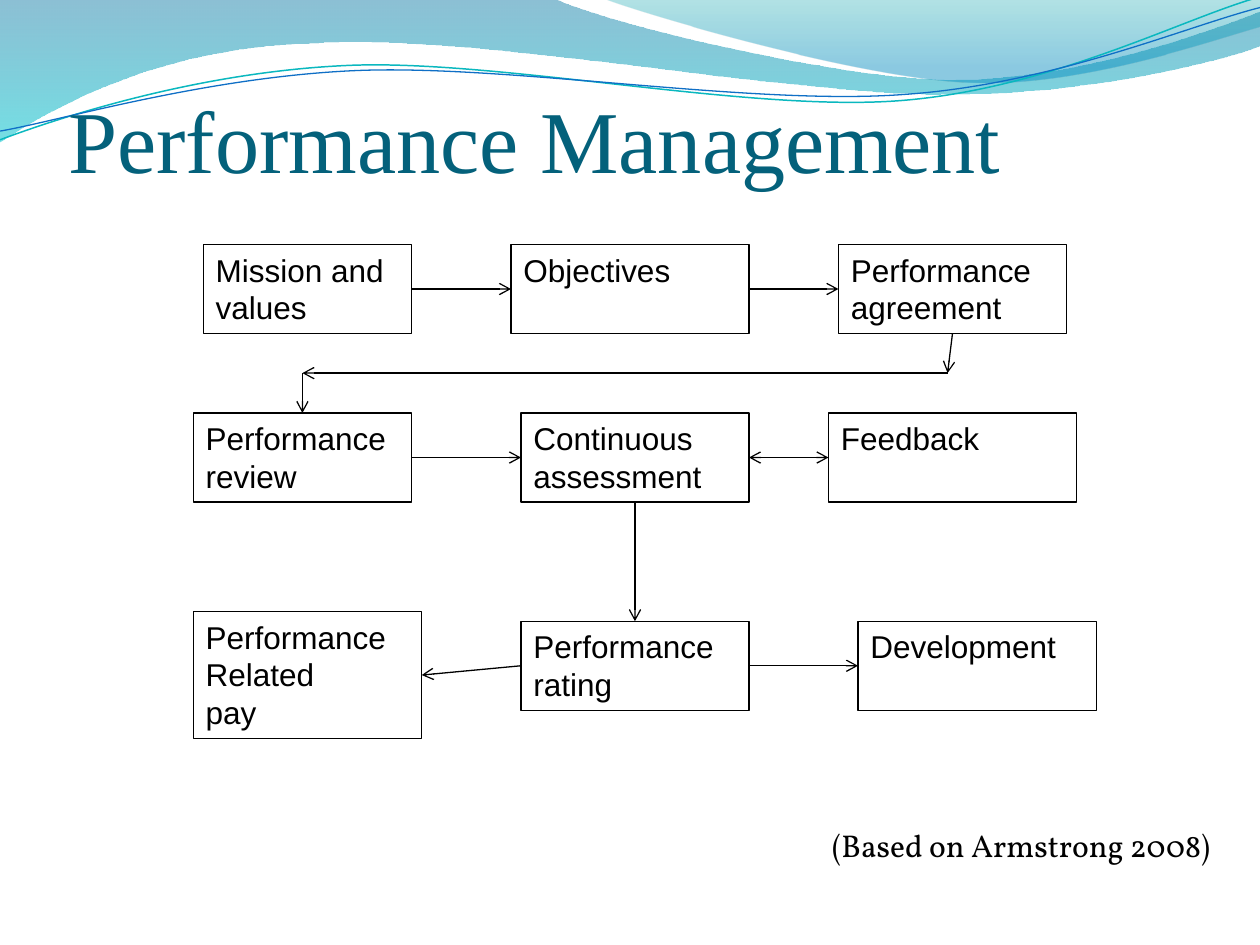
from lxml import etree
from pptx import Presentation
from pptx.dml.color import RGBColor
from pptx.enum.shapes import MSO_CONNECTOR, MSO_SHAPE
from pptx.enum.text import MSO_ANCHOR, PP_ALIGN
from pptx.oxml.ns import qn
from pptx.util import Pt

RECT, LINE = MSO_SHAPE.RECTANGLE, MSO_CONNECTOR.STRAIGHT
TOP, LEFT, BOTTOM, RIGHT = range(4)
rgb = RGBColor.from_string

prs = Presentation()
prs.slide_width, prs.slide_height = Pt(720), Pt(540)
s = prs.slides.add_slide(prs.slide_layouts[6])


def add_wave(start, steps, close):
    """Draw straight (x, y) and cubic (x1, y1, x2, y2, x, y) steps."""
    fb = s.shapes.build_freeform(Pt(start[0]), Pt(start[1]))
    fb.add_line_segments([(Pt(x), Pt(y)) for *_, x, y in steps], close=close)
    sp = fb.convert_to_shape()
    for seg, step in zip(list(sp.element.iter(qn("a:lnTo"))), steps):
        if len(step) == 6:
            seg.tag = qn("a:cubicBezTo")
            for i in (0, 2):
                pt = etree.Element(qn("a:pt"), x=str(Pt(step[i]) - sp.left),
                                   y=str(Pt(step[i + 1]) - sp.top))
                seg.insert(i // 2, pt)
    return sp


def write(tf, text, size, font, color):
    """Fill a text frame, one paragraph for each line of the text."""
    for i, line in enumerate(text.split("\n")):
        p = tf.paragraphs[0] if i == 0 else tf.add_paragraph()
        p.alignment = PP_ALIGN.LEFT
        r = p.add_run()
        r.text = line
        for name, value in {"size": Pt(size), "name": font}.items():
            setattr(r.font, name, value)
        r.font.color.rgb = rgb(color)


# Header waves: start, steps, gradient stops (position, colour, opacity %), line
waves = [
    ((0, 0),
     [(316.8, -0.7), (342.7, 12.2, 478, 45.4, 545.8, 45.4),
      (614.2, 45.4, 689.8, 18.7, 720, 6.5), (720.7, 25.9),
      (707.8, 31.7, 626.4, 54.7, 537.1, 54),
      (447.8, 54, 275, 20.2, 185, 24.5),
      (92.9, 25.9, 33.1, 59.8, -0.7, 81.4)],
     [(0, "0074A1", 45), (1, "00C6CF", 55)], None),
    ((344.9, -0.7),
     [(366.5, 7.9, 491, 44.6, 553.7, 46.8),
      (616.3, 49.7, 691.9, 23, 720, 15.1), (720, 0)],
     [(0, "00A1A9", 30), (0.8, "008BBF", 45)], None),
    ((0, 79.9),
     [(34.6, 67, 113.8, 41, 199.4, 37.4),
      (284.4, 33.8, 427, 64.1, 513.4, 57.6),
      (599.8, 51.1, 675.4, 10.8, 718.6, -1.4)],
     None, ("0AB8BF", 0.85)),
    ((0, 74.9),
     [(33.8, 69.1, 118.1, 43.9, 203.8, 40.3),
      (290.2, 36.7, 429.8, 60.5, 516.2, 54),
      (601.9, 48.2, 677.5, 15.1, 720, 4.3)],
     None, ("0F6FC6", 0.75)),
]
for start, steps, stops, line in waves:
    sp = add_wave(start, steps, bool(stops))
    sp.shadow.inherit = False
    if stops:
        sp.line.fill.background()
        sp.fill.gradient()
        sp.fill.gradient_angle = 270
        for stop, (pos, color, _) in zip(sp.fill.gradient_stops, stops):
            stop.position = pos
            stop.color.rgb = rgb(color)
        for clr, (_, _, opacity) in zip(sp.element.spPr.iter(qn("a:srgbClr")), stops):
            etree.SubElement(clr, qn("a:alpha"), val=str(opacity * 1000))
    else:
        sp.fill.background()
        sp.line.color.rgb, sp.line.width = rgb(line[0]), Pt(line[1])

# Title
sp = s.shapes.add_textbox(Pt(39), Pt(48.5), Pt(648), Pt(56))
tf = sp.text_frame
tf.word_wrap = True
tf.margin_left = tf.margin_right = tf.margin_top = tf.margin_bottom = 0
write(tf, "Performance Management", 50.4, "Times New Roman", "04617B")

# Flow chart boxes: text, left, top, width, height
ROW1, ROW2, ROW3, H = 139.7, 236, 355, 50.9
boxes = {
    "mission": ("Mission and values", 116.2, ROW1, 118.9, H),
    "objectives": ("Objectives", 292, ROW1, 136, H),
    "agreement": ("Performance agreement", 479.1, ROW1, 130.4, H),
    "review": ("Performance review", 110.5, ROW2, 124.6, H),
    "assessment": ("Continuous assessment", 297.7, ROW2, 130.3, H),
    "rating": ("Performance rating", 297.7, ROW3, 130.3, H),
    "pay": ("Performance\nRelated\npay", 110.5, 349.4, 130.5, 72.7),
    "development": ("Development", 490.3, ROW3, 136.4, H),
    "feedback": ("Feedback", 473.4, ROW2, 141.8, H),
}
shapes = {}
for name, (text, *place) in boxes.items():
    sp = shapes[name] = s.shapes.add_shape(RECT, *map(Pt, place))
    sp.shadow.inherit = False
    sp.fill.background()
    sp.line.color.rgb, sp.line.width = rgb("000000"), Pt(0.75)
    sp.text_frame.word_wrap = True
    sp.text_frame.vertical_anchor = MSO_ANCHOR.TOP
    write(sp.text_frame, text, 18, "Arial", "000000")

# Arrows: each end is (box, side) or a free corner point (x, y)
turn_right, turn_left = (541.5, 213.2), (172.8, 213.2)
arrows = [
    (("mission", RIGHT), ("objectives", LEFT), False),
    (("objectives", RIGHT), ("agreement", LEFT), False),
    (turn_right, turn_left, False),
    (("agreement", BOTTOM), turn_right, False),
    (turn_left, ("review", TOP), False),
    (("review", RIGHT), ("assessment", LEFT), False),
    (("assessment", RIGHT), ("feedback", LEFT), True),
    (("assessment", BOTTOM), ("rating", TOP), False),
    (("rating", LEFT), ("pay", RIGHT), False),
    (("rating", RIGHT), ("development", LEFT), False),
]
for start, end, both in arrows:
    free = [p if p[0] not in shapes else (0, 0) for p in (start, end)]
    c = s.shapes.add_connector(LINE, *(Pt(v) for p in free for v in p))
    for (target, side), connect in ((start, c.begin_connect), (end, c.end_connect)):
        if target in shapes:
            connect(shapes[target], side)
    c.line.color.rgb, c.line.width = rgb("000000"), Pt(0.75)
    ln = c.element.spPr.find(qn("a:ln"))
    for tag in ("a:headEnd", "a:tailEnd") if both else ("a:tailEnd",):
        etree.SubElement(ln, qn(tag), type="arrow")
    etree.SubElement(c.element.spPr, qn("a:effectLst"))

# Credit line
sp = s.shapes.add_textbox(Pt(468.5), Pt(468.7), Pt(230.4), Pt(29))
sp.text_frame.word_wrap = False
write(sp.text_frame, "(Based on Armstrong 2008)", 18, "Vollkorn", "000000")

prs.save("out.pptx")
